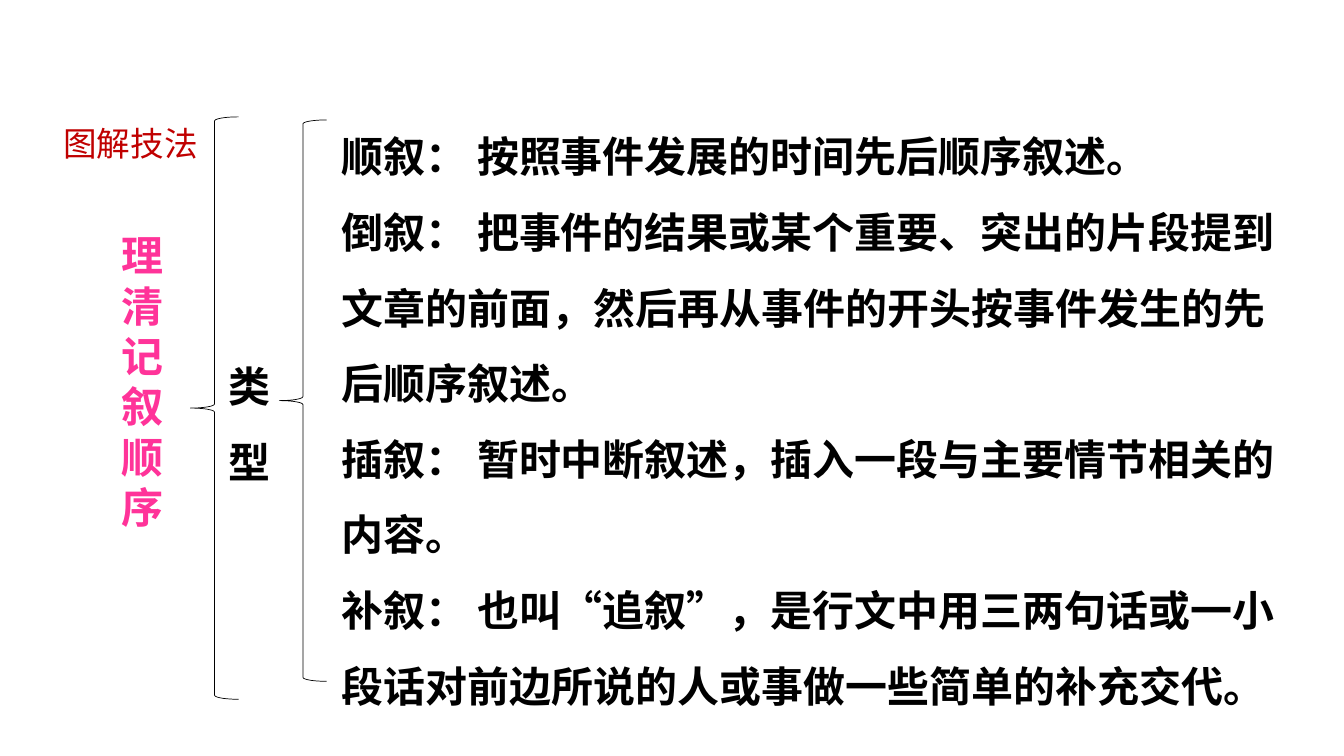
from dataclasses import dataclass

from lxml.etree import SubElement
from pptx import Presentation
from pptx.dml.color import RGBColor
from pptx.enum.shapes import MSO_SHAPE
from pptx.enum.text import MSO_AUTO_SIZE
from pptx.oxml.ns import qn
from pptx.slide import Slide
from pptx.util import Pt

COLORS = {"red": "C00000", "pink": "FF3399", "black": "000000"}
HAN = "Noto Sans CJK SC"


@dataclass
class Box:
    left: float
    top: float
    width: float
    height: float

    def place(self) -> tuple[Pt, Pt, Pt, Pt]:
        return Pt(self.left), Pt(self.top), Pt(self.width), Pt(self.height)


def add_text(slide: Slide, box: Box, text: str, *, size: float = 30,
             font: str = "Arial", color: str = "black",
             bold: bool = True, space: float = 1.0) -> None:
    """Add a wrapped text box; each newline is a line break."""
    frame = slide.shapes.add_textbox(*box.place()).text_frame
    frame.word_wrap = True
    frame.auto_size = MSO_AUTO_SIZE.SHAPE_TO_FIT_TEXT
    para = frame.paragraphs[0]
    para.line_spacing = space
    para.text = text
    for run in para.runs:
        face = run.font
        face.size, face.bold, face.name = Pt(size), bold, font
        face.color.rgb = RGBColor.from_string(COLORS[color])
        SubElement(face._element, qn("a:ea"), typeface=HAN)


def add_brace(slide: Slide, box: Box) -> None:
    brace = slide.shapes.add_shape(MSO_SHAPE.LEFT_BRACE, *box.place())
    brace.shadow.inherit = False
    brace.fill.background()
    brace.line.width = Pt(0.5)
    brace.line.color.rgb = RGBColor.from_string(COLORS["black"])


TOPIC = "理清记叙顺序"
TYPES = [
    "顺叙： 按照事件发展的时间先后顺序叙述。",
    "倒叙： 把事件的结果或某个重要、突出的片段提到文章的前面，"
    "然后再从事件的开头按事件发生的先后顺序叙述。",
    "插叙： 暂时中断叙述，插入一段与主要情节相关的内容。",
    "补叙： 也叫“追叙”，是行文中用三两句话或一小段话"
    "对前边所说的人或事做一些简单的补充交代。",
]
BRACES = [Box(136, 83.5, 34.5, 416), Box(199.5, 85.7, 33.8, 401)]


def main() -> None:
    deck = Presentation()
    deck.slide_width, deck.slide_height = Pt(960), Pt(540)
    slide = deck.slides.add_slide(deck.slide_layouts[6])

    # Heading
    add_text(slide, Box(38.2, 84.2, 145.4, 36), "图解技法",
             size=24, font=HAN, color="red", bold=False)

    # Topic, one character a line
    add_text(slide, Box(80, 160.5, 47.5, 225.4), "\n".join(TOPIC), color="pink")

    # Braces
    for box in BRACES:
        add_brace(slide, box)

    # Branch label and its types
    add_text(slide, Box(156.2, 236.2, 54, 116.6), "类型", space=1.5)
    add_text(slide, Box(236.9, 72, 696.2, 443.5), "\n".join(TYPES), space=1.5)

    deck.save("out.pptx")


if __name__ == "__main__":
    main()
